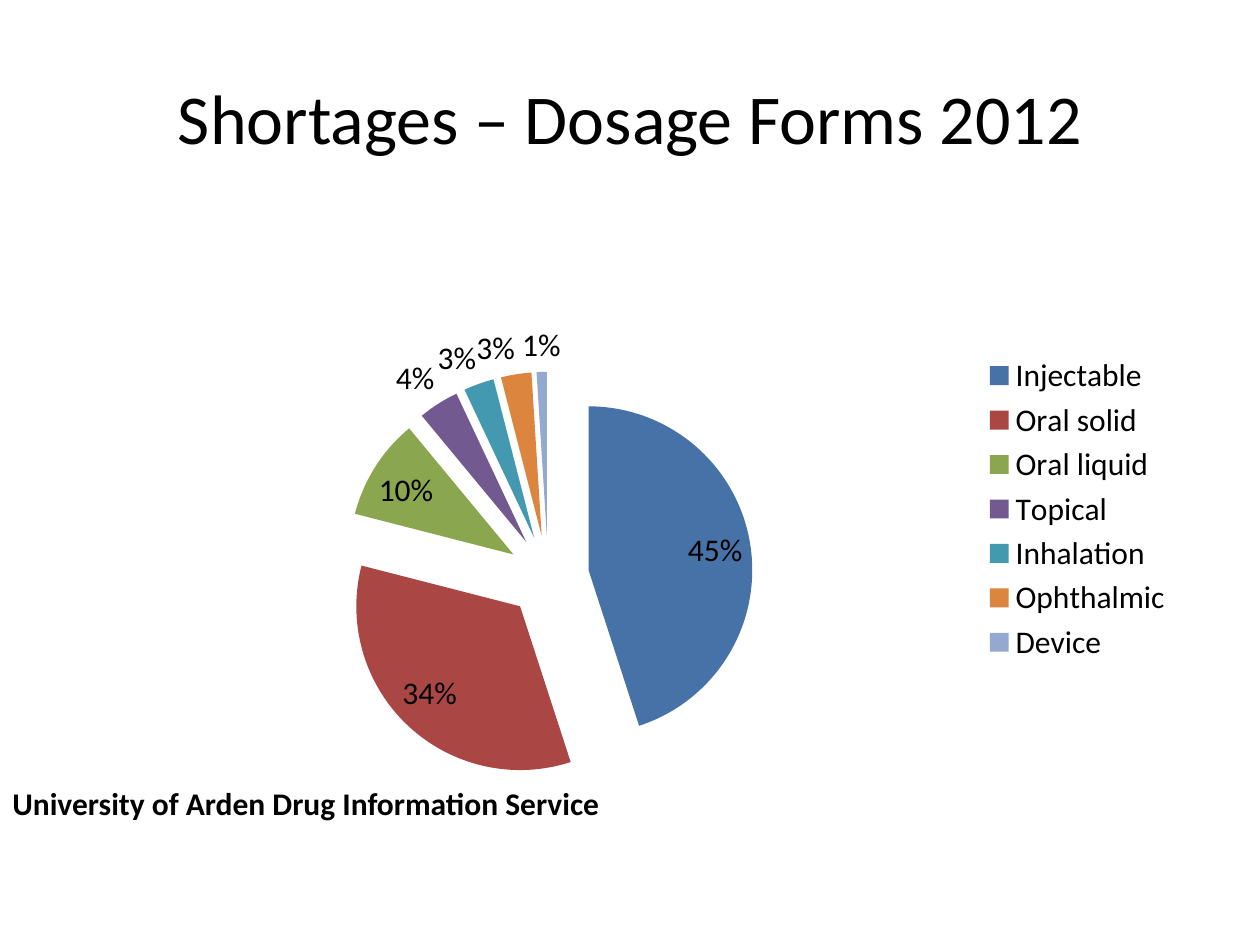
import pptx
import pptx.chart.data
import pptx.dml.color
import pptx.enum.chart
import pptx.enum.text
import pptx.oxml
import pptx.oxml.ns
import pptx.util

Inches, Pt = pptx.util.Inches, pptx.util.Pt

FONT = "Calibri"
BLACK = "000000"
TITLE = "Shortages – Dosage Forms 2012"
CREDIT = "University of Arden Drug Information Service"
DOSAGE_FORMS = [
    ("Injectable", 45, "4672A8"),
    ("Oral solid", 34, "AA4744"),
    ("Oral liquid", 10, "8AA64F"),
    ("Topical", 4, "725990"),
    ("Inhalation", 3, "4299B0"),
    ("Ophthalmic", 3, "DC853E"),
    ("Device", 1, "93A9CF"),
]
EXPLOSION = 25
CHART_BOX = (0.58, 1.75, 8.83, 4.58)
PIE_BOX = (2.73, 2.95, 3.25, 3.25)  # on the slide, exploded slices included


def rgb(color):
    return pptx.dml.color.RGBColor.from_string(color)


def style_font(font, size, bold=False):
    font.name, font.size, font.bold = FONT, Pt(size), bold
    font.color.rgb = rgb(BLACK)


def add_text(slide, text, box, size, bold=False, align=pptx.enum.text.PP_ALIGN.LEFT,
             anchor=pptx.enum.text.MSO_ANCHOR.TOP):
    frame = slide.shapes.add_textbox(*map(Inches, box)).text_frame
    frame.word_wrap = True
    frame.vertical_anchor = anchor
    paragraph = frame.paragraphs[0]
    paragraph.text = text
    paragraph.alignment = align
    style_font(paragraph.font, size, bold)


def place_plot(chart):
    """Fix the pie's place as fractions of the chart's box."""
    left, top, width, height = CHART_BOX
    x, y, w, h = PIE_BOX
    fractions = {"x": (x - left) / width, "y": (y - top) / height,
                 "w": w / width, "h": h / height}
    values = "".join(f'<c:{key} val="{value:.3f}"/>' for key, value in fractions.items())
    layout = pptx.oxml.parse_xml(
        f'<c:layout {pptx.oxml.ns.nsdecls("c")}><c:manualLayout>'
        '<c:layoutTarget val="inner"/><c:xMode val="edge"/><c:yMode val="edge"/>'
        f'{values}</c:manualLayout></c:layout>')
    plot_area = chart.element.find(".//" + pptx.oxml.ns.qn("c:plotArea"))
    for old_layout in plot_area.findall(pptx.oxml.ns.qn("c:layout")):
        plot_area.remove(old_layout)
    plot_area.insert(0, layout)


def add_pie(slide):
    names, values, colors = zip(*DOSAGE_FORMS)
    data = pptx.chart.data.CategoryChartData()
    data.categories = names
    data.add_series("Series 1", values)
    chart = slide.shapes.add_chart(pptx.enum.chart.XL_CHART_TYPE.PIE_EXPLODED,
                                   *map(Inches, CHART_BOX), data).chart
    style_font(chart.font, 18)
    chart.has_title = False
    chart.has_legend = True
    chart.legend.position = pptx.enum.chart.XL_LEGEND_POSITION.RIGHT
    chart.legend.include_in_layout = False

    plot = chart.plots[0]
    plot.vary_by_categories = True
    series = plot.series[0]
    explosion = series._element.find(pptx.oxml.ns.qn("c:explosion"))
    explosion.set("val", str(EXPLOSION))
    for index, color in enumerate(colors):
        fill = series.points[index].format.fill
        fill.solid()
        fill.fore_color.rgb = rgb(color)

    labels = series.data_labels
    labels.show_percentage = True
    labels.show_value = False
    labels.number_format = "0%"
    labels.number_format_is_linked = False
    labels.position = pptx.enum.chart.XL_LABEL_POSITION.BEST_FIT
    style_font(labels.font, 18)
    place_plot(chart)


presentation = pptx.Presentation()
presentation.slide_width, presentation.slide_height = Inches(10), Inches(7.5)
slide = presentation.slides.add_slide(presentation.slide_layouts[6])
add_text(slide, TITLE, (0.5, 0.3, 9, 1.25), 40, align=pptx.enum.text.PP_ALIGN.CENTER,
         anchor=pptx.enum.text.MSO_ANCHOR.MIDDLE)
add_pie(slide)
add_text(slide, CREDIT, (0, 6.17, 6.17, 0.4), 18, bold=True)
presentation.save("out.pptx")
